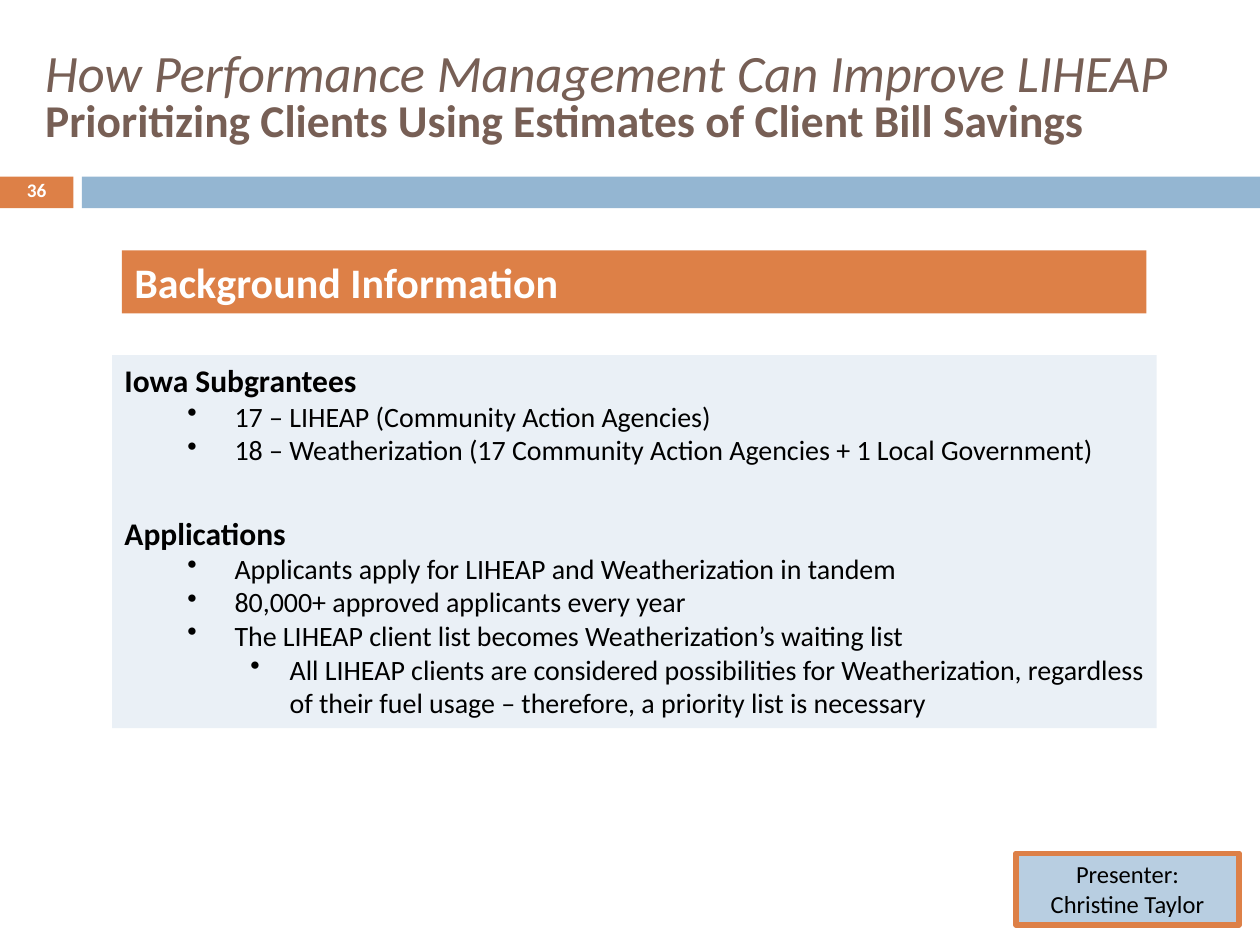
import pptx
import pptx.dml.color
import pptx.enum.shapes
import pptx.enum.text
import pptx.oxml.ns
import pptx.util
from lxml import etree

Cm = pptx.util.Cm
Pt = pptx.util.Pt
ALIGN = pptx.enum.text.PP_ALIGN
ANCHOR = pptx.enum.text.MSO_ANCHOR

ORANGE = "DD8047"
BLUE = "94B6D2"
PALE = "EAF0F6"
BROWN = "775F55"
WHITE = "FFFFFF"
BLACK = "000000"

# Bullet level: (text indent, bullet offset) in centimetres
BULLETS = {1: (2.22, -0.95), 2: (3.33, -0.79)}

SECTIONS = {
    "Iowa Subgrantees": [
        (1, "17 – LIHEAP (Community Action Agencies)"),
        (1, "18 – Weatherization (17 Community Action Agencies + 1 Local Government)"),
    ],
    "Applications": [
        (1, "Applicants apply for LIHEAP and Weatherization in tandem"),
        (1, "80,000+ approved applicants every year"),
        (1, "The LIHEAP client list becomes Weatherization’s waiting list"),
        (2, "All LIHEAP clients are considered possibilities for Weatherization, "
            "regardless of their fuel usage – therefore, a priority list is necessary"),
    ],
}


def color(hex_text):
    return pptx.dml.color.RGBColor.from_string(hex_text)


def add_span(para, text, size=16, fill=BLACK, bold=False, italic=False):
    span = para.add_run()
    span.text = text
    span.font.name = "Calibri"
    span.font.size = Pt(size)
    span.font.color.rgb = color(fill)
    span.font.bold = bold
    span.font.italic = italic


def set_indent(para, left, first=0, bullet=None):
    """Indent a paragraph, in centimetres, and give it a bullet if one is named."""
    properties = para._p.get_or_add_pPr()
    properties.set("marL", str(Cm(left)))
    properties.set("indent", str(Cm(first)))
    if bullet:
        mark = etree.SubElement(properties, pptx.oxml.ns.qn("a:buChar"))
        mark.set("char", bullet)


class SlideWriter:
    def __init__(self, deck):
        self.page = deck.slides.add_slide(deck.slide_layouts[6])

    def rectangle(self, left, top, width, height, fill, alpha=None, line=None):
        box = self.page.shapes.add_shape(
            pptx.enum.shapes.MSO_SHAPE.RECTANGLE,
            Cm(left), Cm(top), Cm(width), Cm(height))
        box.shadow.inherit = False
        box.fill.solid()
        box.fill.fore_color.rgb = color(fill)
        if alpha:
            tint = box.fill._xPr.find(".//" + pptx.oxml.ns.qn("a:srgbClr"))
            etree.SubElement(tint, pptx.oxml.ns.qn("a:alpha")).set("val", str(alpha * 1000))
        if line:
            box.line.color.rgb = color(line)
            box.line.width = Pt(3)
        else:
            box.line.fill.background()
        return box

    def panel(self, *place, **style):
        """Add a rectangle that grows with its text and return its text frame."""
        frame = self.rectangle(*place, **style).text_frame
        frame.word_wrap = True
        frame.auto_size = pptx.enum.text.MSO_AUTO_SIZE.SHAPE_TO_FIT_TEXT
        frame.vertical_anchor = ANCHOR.TOP
        return frame

    def text_line(self, left, top, width, height, align=ALIGN.LEFT):
        """Add a middle-anchored text box and return its tightly spaced paragraph."""
        box = self.page.shapes.add_textbox(Cm(left), Cm(top), Cm(width), Cm(height))
        box.text_frame.word_wrap = True
        box.text_frame.vertical_anchor = ANCHOR.MIDDLE
        para = box.text_frame.paragraphs[0]
        para.line_spacing = 0.8
        para.alignment = align
        return para

    def paragraph(self, frame, text, align=ALIGN.LEFT, level=0, before=0, **style):
        first = frame.paragraphs[0]
        para = frame.add_paragraph() if first.runs else first
        para.alignment = align
        para.space_before = Pt(before)
        if level:
            para.level = level
            set_indent(para, *BULLETS[level], bullet="•")
        add_span(para, text, **style)


def main():
    deck = pptx.Presentation()
    deck.slide_width, deck.slide_height = Cm(25.4), Cm(19.05)
    writer = SlideWriter(deck)

    writer.rectangle(0, 3.56, 1.48, 0.64, ORANGE)
    writer.rectangle(1.65, 3.56, 23.75, 0.64, BLUE)

    title = writer.text_line(0, 0.64, 25.83, 2.74)
    set_indent(title, 0.66)
    add_span(title, "How Performance Management Can Improve LIHEAP",
             size=30, fill=BROWN, italic=True)
    title.add_line_break()
    add_span(title, "Prioritizing Clients Using Estimates of Client Bill Savings",
             size=26, fill=BROWN, bold=True)

    number = writer.text_line(0, 3.53, 1.48, 0.69, align=ALIGN.CENTER)
    add_span(number, "36", size=11, fill=WHITE, bold=True)

    presenter = writer.panel(20.48, 17.2, 4.5, 1.45, fill=BLUE, alpha=66, line=ORANGE)
    for text in ("Presenter:", "Christine Taylor"):
        writer.paragraph(presenter, text, align=ALIGN.CENTER, size=14)

    body = writer.panel(2.26, 7.16, 21.06, 7.52, fill=PALE)
    for index, (heading, points) in enumerate(SECTIONS.items()):
        writer.paragraph(body, heading, before=27 * index, size=18, bold=True)
        for level, text in points:
            writer.paragraph(body, text, level=level)

    banner = writer.panel(2.46, 5.05, 20.65, 1.27, fill=ORANGE)
    writer.paragraph(banner, "Background Information", size=24, fill=WHITE, bold=True)

    deck.save("out.pptx")


if __name__ == "__main__":
    main()
